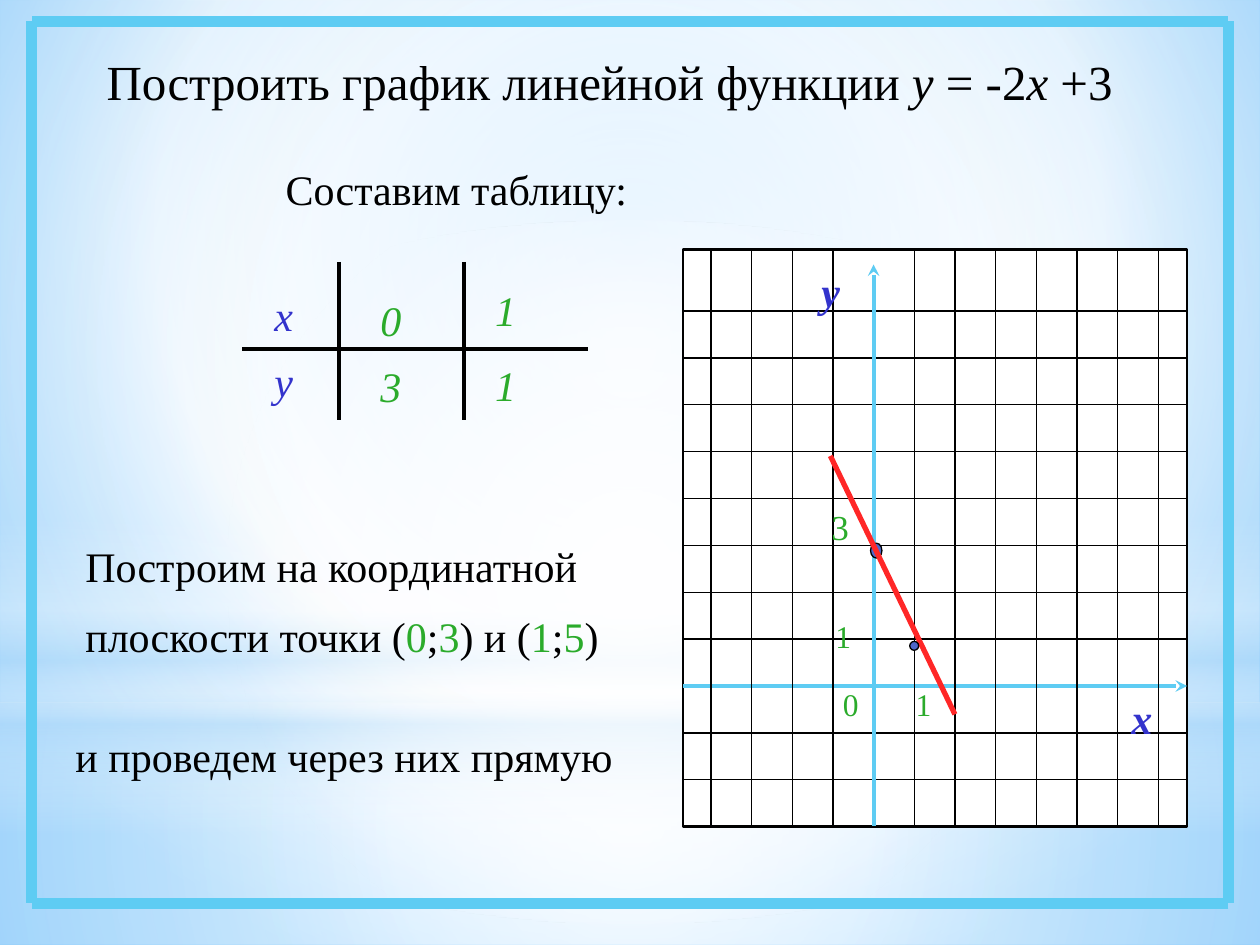
import lxml.etree
import pptx
import pptx.dml.color
import pptx.enum.shapes
import pptx.enum.text
import pptx.oxml.ns
import pptx.util

Cm, Pt = pptx.util.Cm, pptx.util.Pt
qn = pptx.oxml.ns.qn
SHAPE = pptx.enum.shapes.MSO_SHAPE

BLACK, WHITE, SKY = "000000", "FFFFFF", "5ECCF3"
GREEN, BLUE, RED, DOT = "2BAB2B", "3333CC", "FF2727", "4E67C8"
CENTRE = (50, 50, 50, 50)


def color(hex_text):
    return pptx.dml.color.RGBColor.from_string(hex_text)


def child(parent, tag, **attributes):
    element = lxml.etree.SubElement(parent, qn(tag))
    for name, value in attributes.items():
        element.set(name, str(value))
    return element


def set_gradient(fill, owner, stops, focus=None):
    """Fill with (position, colour, opacity) stops; focus makes it circular."""
    fill.gradient()
    gradient = next(owner.iter(qn("a:gradFill")))
    for old in list(gradient):
        gradient.remove(old)
    stop_list = child(gradient, "a:gsLst")
    for position, hex_text, opacity in stops:
        stop = child(stop_list, "a:gs", pos=position * 1000)
        stop_color = child(stop, "a:srgbClr", val=hex_text)
        child(stop_color, "a:alpha", val=opacity * 1000)
    if focus:
        circle = child(gradient, "a:path", path="circle")
        sides = {side: percent * 1000 for side, percent in zip("ltrb", focus)}
        child(circle, "a:fillToRect", **sides)
    else:
        child(gradient, "a:lin", ang=5400000, scaled=0)


def add_shape(shapes, kind, box):
    shape = shapes.add_shape(kind, *map(Cm, box))
    shape.shadow.inherit = False
    return shape


def add_glow(shapes, kind, top, height, stops, focus=None):
    shape = add_shape(shapes, kind, (0, top, 25.4, height))
    set_gradient(shape.fill, shape.element, stops, focus)
    shape.line.fill.background()


def add_outlined(shapes, kind, box, fill, width):
    shape = add_shape(shapes, kind, box)
    shape.fill.solid()
    shape.fill.fore_color.rgb = color(fill)
    shape.line.color.rgb = color(BLACK)
    shape.line.width = Pt(width)


def add_line(shapes, start, end, hex_text=BLACK, width=0.75, arrow=False):
    """Draw a line; an arrow points at its start."""
    connector = shapes.add_connector(
        pptx.enum.shapes.MSO_CONNECTOR.STRAIGHT, *map(Cm, start + end))
    connector.line.color.rgb = color(hex_text)
    connector.line.width = Pt(width)
    properties = connector.element.spPr
    if arrow:
        child(properties.find(qn("a:ln")), "a:headEnd", type="stealth")
    child(properties, "a:effectLst")


def add_text(shapes, box, paragraphs, size=24, hex_text=BLACK, wrap=True,
             **font_format):
    """Paragraphs are (line spacing, runs); runs are (text, own format)."""
    frame = shapes.add_textbox(*map(Cm, box)).text_frame
    frame.word_wrap = wrap
    frame.auto_size = pptx.enum.text.MSO_AUTO_SIZE.SHAPE_TO_FIT_TEXT
    for index, (spacing, runs) in enumerate(paragraphs):
        paragraph = frame.add_paragraph() if index else frame.paragraphs[0]
        paragraph.line_spacing = spacing
        if index:
            paragraph.space_before = Pt(14)
        for text, own_format in runs:
            run = paragraph.add_run()
            run.text = text
            own = {"name": "Times New Roman", "size": Pt(size),
                   **font_format, **own_format}
            run.font.color.rgb = color(own.pop("hex_text", hex_text))
            for name, value in own.items():
                setattr(run.font, name, value)


def add_label(shapes, box, text, **text_format):
    add_text(shapes, box, [(1.0, [(text, {})])], **text_format)


def add_backdrop(slide):
    set_gradient(slide.background.fill, slide.element,
                 [(0, "9ED5FF", 100), (60, WHITE, 100), (100, "5BB9FF", 100)],
                 (20, 10, 20, 60))
    shapes, pale = slide.shapes, "B4DCFA"
    add_glow(shapes, SHAPE.RECTANGLE, 14.17, 4.88,
             [(0, WHITE, 91), (37, WHITE, 76), (100, pale, 79)], CENTRE)
    add_glow(shapes, SHAPE.RECTANGLE, 0, 14.17,
             [(0, WHITE, 89), (48, WHITE, 62), (100, pale, 79)], CENTRE)
    add_glow(shapes, SHAPE.RECTANGLE, 10.46, 6.35,
             [(0, WHITE, 0), (29, WHITE, 30), (45, pale, 40),
              (55, WHITE, 26), (65, pale, 60), (100, WHITE, 0)])
    add_glow(shapes, SHAPE.OVAL, 4.45, 14.17,
             [(0, WHITE, 100), (56, WHITE, 0)], CENTRE)
    left, top, right, bottom = 0.64, 0.43, 24.76, 18.21
    for x in (left, right):
        add_line(shapes, (x, top), (x, bottom), SKY, 6)
    for y in (bottom, top):
        add_line(shapes, (right, y), (left, y), SKY, 6)


def add_value_table(shapes):
    rules = shapes.add_group_shape().shapes
    add_line(rules, (4.88, 7.04), (11.86, 7.04), width=2.25)
    for x in (6.83, 9.35):
        add_line(rules, (x, 5.28), (x, 8.46), width=2.25)
    add_text(shapes, (5.28, 5.72, 1.7, 2.59),
             [(1.0, [("х", {})]), (0.8, [("у", {})])],
             hex_text=BLUE, italic=True)
    add_text(shapes, (7.42, 5.51, 1.07, 2.9), [(1.3, [("03", {})])],
             hex_text=GREEN, italic=True)
    add_text(shapes, (9.73, 5.72, 1.47, 2.72),
             [(0.9, [("1", {})]), (1.0, [("1", {})])],
             hex_text=GREEN, italic=True)


def add_coordinate_plane(shapes):
    left, top, right, bottom = 13.77, 5.03, 23.93, 16.66
    first_column, column_step, columns, y_axis = 14.33, 0.82, 12, 4
    first_row, row_step, rows, x_axis = 6.27, 0.945, 11, 8
    plane = shapes.add_group_shape().shapes
    add_outlined(plane, SHAPE.RECTANGLE,
                 (left, top, right - left, bottom - top), WHITE, 1.5)
    for row in range(rows):
        if row != x_axis:
            y = first_row + row * row_step
            add_line(plane, (left, y), (right, y))
    axis_x = first_column + y_axis * column_step
    axis_y = first_row + x_axis * row_step
    add_line(plane, (axis_x, 5.33), (axis_x, bottom), SKY, 2.25, arrow=True)
    add_line(plane, (right, axis_y), (left, axis_y), SKY, 2.25, arrow=True)
    for column in range(columns):
        if column != y_axis:
            x = first_column + column * column_step
            add_line(plane, (x, bottom), (x, top))

    for box, name in (((22.56, 13.84, 1.09, 1.27), "х"),
                      ((16.31, 5.23, 1.07, 1.27), "у")):
        add_label(plane, box, name, hex_text=BLUE, bold=True, italic=True)
    for box, number, size in (((18.21, 13.69, 1.37, 1.02), "1", 18),
                              ((16.74, 13.69, 0.81, 1.02), "0", 18),
                              ((16.59, 12.32, 0.81, 1.02), "1", 18),
                              ((16.51, 10.06, 1.65, 1.09), "3", 20)):
        add_label(plane, box, number, size=size, hex_text=GREEN)

    add_outlined(shapes, SHAPE.OVAL, (17.55, 10.95, 0.23, 0.3), DOT, 0.75)
    add_line(shapes, (19.25, 14.4), (16.74, 9.19), RED, 3)
    add_outlined(shapes, SHAPE.OVAL, (18.34, 12.93, 0.18, 0.18), DOT, 0.75)


def main():
    presentation = pptx.Presentation()
    presentation.slide_width, presentation.slide_height = Cm(25.4), Cm(19.05)
    slide = presentation.slides.add_slide(presentation.slide_layouts[6])
    shapes = slide.shapes
    italic, green = {"italic": True}, {"hex_text": GREEN}

    add_backdrop(slide)
    add_text(shapes, (1.9, 0.91, 22.02, 1.45),
             [(1.0, [("Построить график линейной функции ", {}),
                     ("у", italic), (" = -2", {}),
                     ("х ", italic), ("+3", {})])], size=28)
    add_label(shapes, (5.51, 3.18, 7.42, 1.27), "Составим таблицу:")
    add_value_table(shapes)
    add_text(shapes, (1.47, 10.36, 11.43, 3.1),
             [(1.4, [("Построим на координатной плоскости точки (", {}),
                     ("0", green), (";", {}), ("3", green), (") и (", {}),
                     ("1", green), (";", {}), ("5", green), (")", {})])])
    add_label(shapes, (1.27, 14.61, 11.35, 1.27),
              "и проведем через них прямую", wrap=False)
    add_coordinate_plane(shapes)
    presentation.save("out.pptx")


if __name__ == "__main__":
    main()
